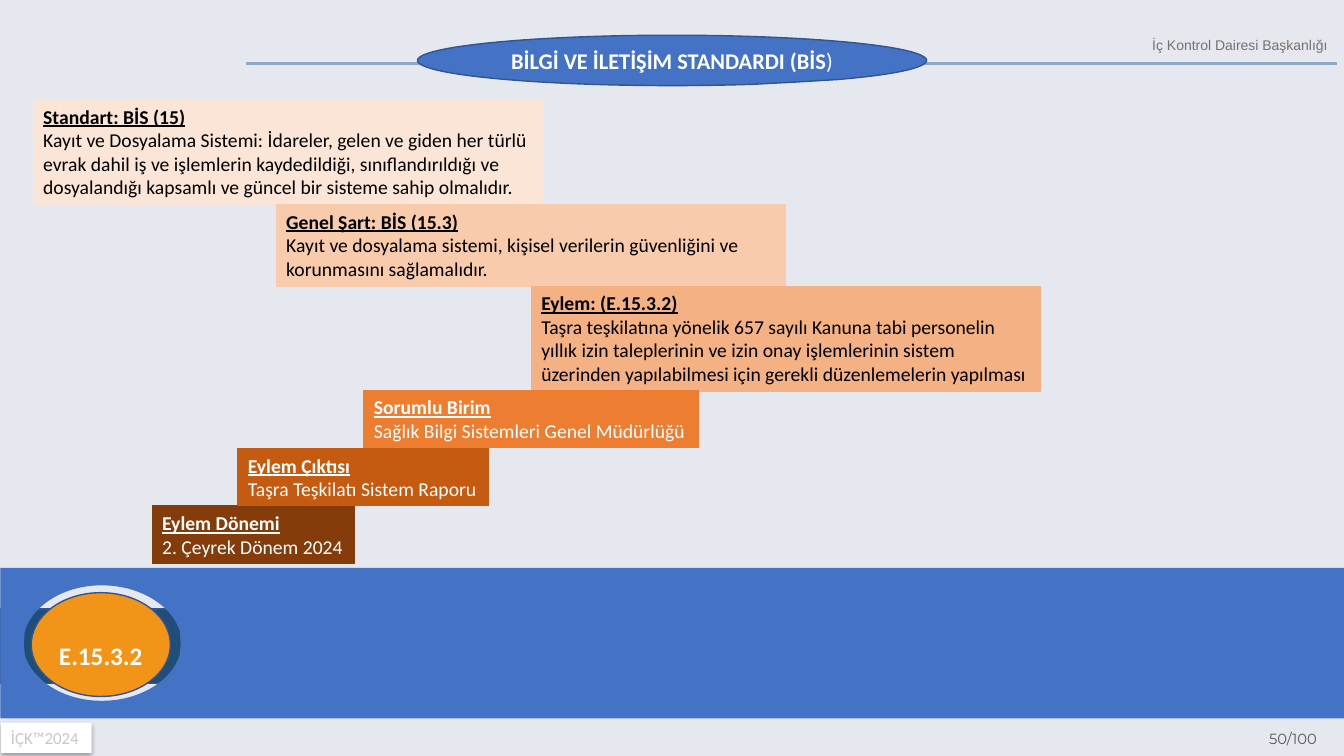
from lxml import etree
from pptx import Presentation
from pptx.dml.color import RGBColor
from pptx.enum.shapes import MSO_CONNECTOR, MSO_SHAPE as Shape
from pptx.enum.text import MSO_ANCHOR as Anchor, MSO_AUTO_SIZE as AutoSize, PP_ALIGN as Align
from pptx.oxml.ns import qn
from pptx.util import Inches, Pt

WHITE, BLACK = "FFFFFF", "000000"
BLUE, OUTLINE = "4472C4", "325491"
BAND_MIDDLE = 6.38

# left, top, width, height, fill, text colour, wrap, heading, body
STEPS = [
    (0.33, 0.99, 5.05, 1.04, "FBE5D6", BLACK, True, "Standart: BİS (15)",
     "Kayıt ve Dosyalama Sistemi: İdareler, gelen ve giden her türlü evrak dahil iş ve "
     "işlemlerin kaydedildiği, sınıflandırıldığı ve dosyalandığı kapsamlı ve güncel bir "
     "sisteme sahip olmalıdır."),
    (2.74, 2.03, 5.05, 0.81, "F8CBAD", BLACK, True, "Genel Şart: BİS (15.3)",
     "Kayıt ve dosyalama sistemi, kişisel verilerin güvenliğini ve korunmasını sağlamalıdır."),
    (5.27, 2.84, 5.05, 1.04, "F4B183", BLACK, True, "Eylem: (E.15.3.2)",
     "Taşra teşkilatına yönelik 657 sayılı Kanuna tabi personelin yıllık izin taleplerinin "
     "ve izin onay işlemlerinin sistem üzerinden yapılabilmesi için gerekli düzenlemelerin "
     "yapılması"),
    (1.51, 5.02, 2.01, 0.57, "843C0B", WHITE, False, "Eylem Dönemi",
     "2. Çeyrek Dönem 2024"),
    (2.36, 4.45, 2.49, 0.57, "C55A11", WHITE, False, "Eylem Çıktısı",
     "Taşra Teşkilatı Sistem Raporu"),
    (3.61, 3.87, 3.32, 0.57, "ED7D31", WHITE, False, "Sorumlu Birim",
     "Sağlık Bilgi Sistemleri Genel Müdürlüğü"),
]


def rgb(value):
    return RGBColor.from_string(value)


def paint(shape, fill, line=None, width=1.0):
    shape.shadow.inherit = False
    shape.fill.solid()
    shape.fill.fore_color.rgb = rgb(fill)
    if line:
        shape.line.color.rgb = rgb(line)
        shape.line.width = Pt(width)
    else:
        shape.line.fill.background()


def add_block(slide, kind, box, fill, line=None, width=1.0):
    block = slide.shapes.add_shape(kind, *map(Inches, box))
    paint(block, fill, line, width)
    return block


def write(shape, paragraphs, wrap=True, anchor=Anchor.TOP, align=Align.LEFT,
          grow=True):
    """Each paragraph is a list of (text, format) runs."""
    frame = shape.text_frame
    frame.word_wrap = wrap
    frame.auto_size = AutoSize.SHAPE_TO_FIT_TEXT if grow else AutoSize.NONE
    frame.vertical_anchor = anchor
    for index, runs in enumerate(paragraphs):
        paragraph = frame.add_paragraph() if index else frame.paragraphs[0]
        paragraph.alignment = align
        for text, style in runs:
            run = paragraph.add_run()
            run.text = text
            for name, value in style.items():
                setattr(run.font, name, value)
            run.font.color.rgb = rgb(run_color(style, shape))


def style(size, name="Calibri", **extra):
    return {"size": Pt(size), "name": name, **extra}


def run_color(_style, shape):
    return TEXT_COLORS[shape.shape_id]


TEXT_COLORS = {}


def add_text(slide, box, text, color, form, **layout):
    label = slide.shapes.add_textbox(*map(Inches, box))
    TEXT_COLORS[label.shape_id] = color
    write(label, [[(text, form)]], **layout)


def add_rule(slide, start, end, color, width):
    rule = slide.shapes.add_connector(MSO_CONNECTOR.STRAIGHT, *map(Inches, start + end))
    rule.line.color.rgb = rgb(color)
    rule.line.width = Pt(width)
    etree.SubElement(rule._element.spPr, qn("a:effectLst"))


def add_drop_shadow(shape):
    effects = shape._element.spPr.find(qn("a:effectLst"))
    shadow = etree.SubElement(effects, qn("a:outerShdw"), blurRad=str(Pt(3.5)),
                              dist=str(Pt(2.2)), dir="5400000", rotWithShape="0")
    color = etree.SubElement(shadow, qn("a:srgbClr"), val=BLACK)
    etree.SubElement(color, qn("a:alpha"), val="32000")


def curve(points, steps=24):
    """Points along a cubic curve, without its start."""
    for t in (step / steps for step in range(1, steps + 1)):
        weights = ((1 - t) ** 3, 3 * t * (1 - t) ** 2, 3 * t * t * (1 - t), t ** 3)
        yield tuple(sum(w * p[axis] for w, p in zip(weights, points)) for axis in (0, 1))


def add_band_half(slide, side):
    """Half of the blue band around the round opening; side is -1 above, 1 below."""
    right_arc = [(1.79, 0.12), (1.71, 0.38), (1.39, 0.58), (1.01, 0.58)]
    left_arc = [(1.01, 0.58), (0.63, 0.58), (0.32, 0.38), (0.24, 0.12)]
    outline = [(0.01, 0.74), (13.34, 0.74), (13.34, 0), (1.8, 0), right_arc[0],
               *curve(right_arc), *curve(left_arc), (0.23, 0), (0.01, 0)]
    points = [(Inches(x), Inches(BAND_MIDDLE + side * y)) for x, y in outline]
    builder = slide.shapes.build_freeform(*points[0])
    builder.add_line_segments(points[1:], close=True)
    paint(builder.convert_to_shape(), BLUE, BLUE)


def add_step(slide, left, top, width, height, fill, color, wrap, heading, body):
    step = add_block(slide, Shape.RECTANGLE, (left, top, width, height), fill, fill, 0.75)
    TEXT_COLORS[step.shape_id] = color
    write(step, [[(heading, style(14, bold=True, underline=True))],
                 [(body, style(14))]], wrap=wrap)


def main():
    deck = Presentation()
    deck.slide_width, deck.slide_height = Inches(13.33), Inches(7.5)
    slide = deck.slides.add_slide(deck.slide_layouts[6])
    slide.background.fill.solid()
    slide.background.fill.fore_color.rgb = rgb("E5E8EF")

    # Header and footer
    add_rule(slide, (13.26, 0.63), (2.44, 0.63), "8DA9C6", 1.5)
    add_text(slide, (12.49, 7.19, 0.77, 0.4), "50/100", "595959",
             style(10.5, "Montserrat"), grow=False)
    add_text(slide, (11.33, 0.31, 2, 0.27), "İç Kontrol Dairesi Başkanlığı", "767171",
             style(10, "Arial"))
    year_tag = add_block(slide, Shape.RECTANGLE, (0.01, 7.17, 0.9, 0.3), WHITE)
    add_drop_shadow(year_tag)
    TEXT_COLORS[year_tag.shape_id] = "C7C7C7"
    write(year_tag, [[("İÇK™2024", style(12))]])

    # Blue band with the action badge in its opening
    add_block(slide, Shape.RECTANGLE, (0, 6.04, 2.67, 0.74), "1F4E79", OUTLINE)
    add_block(slide, Shape.OVAL, (0.31, 5.88, 1.38, 1.03), "F19417", OUTLINE)
    add_text(slide, (0.48, 6.3, 1.04, 0.3), "E.15.3.2", WHITE, style(18, bold=True),
             wrap=False, align=Align.CENTER)
    for side in (-1, 1):
        add_band_half(slide, side)

    # Cascade of steps
    for step in STEPS:
        add_step(slide, *step)

    # Title callout
    title = add_block(slide, Shape.OVAL_CALLOUT, (4.14, 0.35, 5.05, 0.5), BLUE, OUTLINE)
    title.adjustments[0], title.adjustments[1] = 0.244, 0.429
    TEXT_COLORS[title.shape_id] = WHITE
    write(title, [[("BİLGİ VE İLETİŞİM STANDARDI (BİS", style(16, bold=True)),
                   (")", style(16))]],
          anchor=Anchor.MIDDLE, align=Align.CENTER, grow=False)

    deck.save("out.pptx")


if __name__ == "__main__":
    main()
